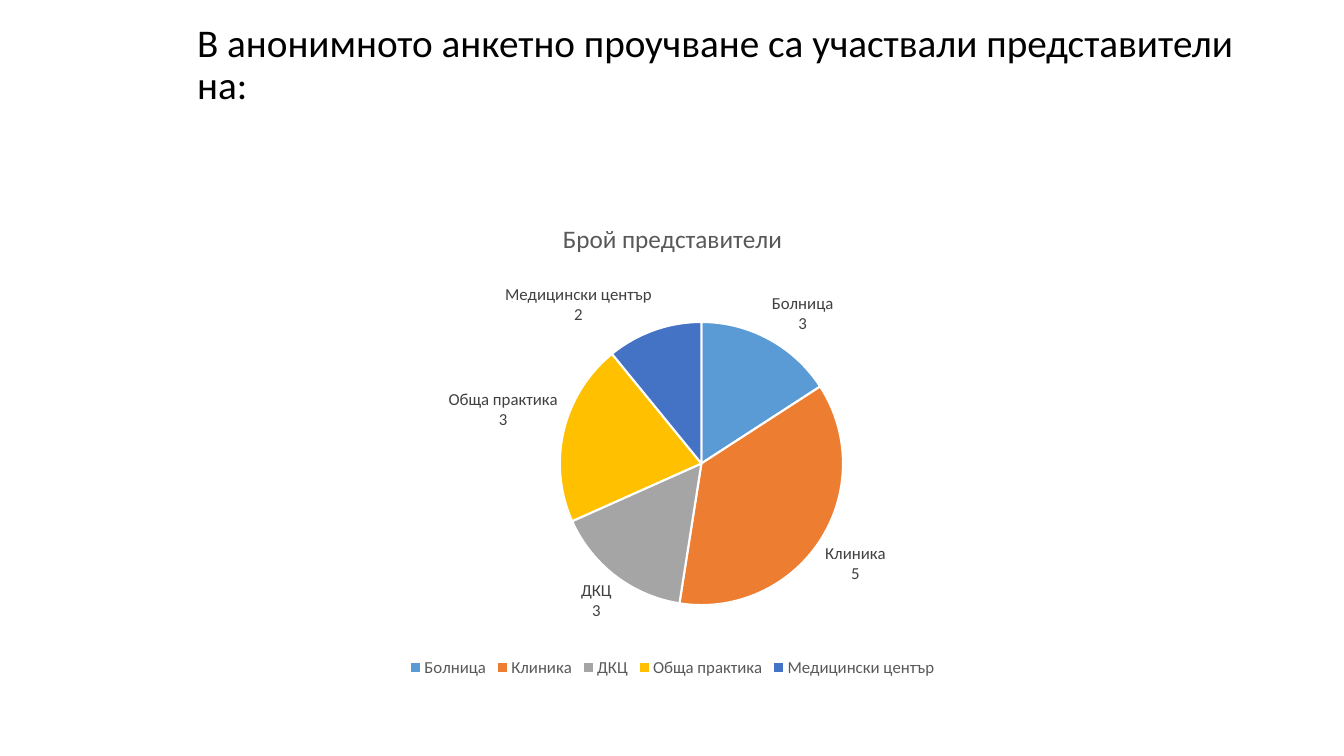
from dataclasses import dataclass

from lxml.etree import SubElement
from pptx import Presentation
from pptx.chart.data import CategoryChartData
from pptx.dml.color import RGBColor
from pptx.enum.chart import XL_CHART_TYPE, XL_LABEL_POSITION, XL_LEGEND_POSITION
from pptx.enum.text import MSO_ANCHOR, MSO_AUTO_SIZE, PP_ALIGN
from pptx.oxml.ns import qn
from pptx.util import Emu, Pt


@dataclass(frozen=True)
class Theme:
    """Font, type sizes and colours of the slide."""
    font: str = "Calibri"
    title_size: int = 28
    chart_title_size: int = 18
    label_size: int = 12
    text: str = "000000"
    muted: str = "595959"
    label: str = "404040"
    white: str = "FFFFFF"
    slices: tuple = ("5B9BD5", "ED7D31", "A5A5A5", "FFC000", "4472C4")


THEME = Theme()
EMU_PER_PX = 914400 / 100.8
GROUPS = [
    ("Болница", 16, 3),
    ("Клиника", 37, 5),
    ("ДКЦ", 16, 3),
    ("Обща практика", 21, 3),
    ("Медицински център", 11, 2),
]


def px(n):
    """Turn pixels into EMU."""
    return Emu(round(n * EMU_PER_PX))


def style_font(font, size, color):
    """Set typeface, size and colour of a font."""
    font.name = THEME.font
    font.size = Pt(size)
    font.bold = False
    font.color.rgb = RGBColor.from_string(color)


def style_text(tf, size, color):
    """Style every run of a text frame."""
    for p in tf.paragraphs:
        for r in p.runs:
            style_font(r.font, size, color)


def add_title(s, text, left, top, width, height):
    """Place and format the title placeholder."""
    sp = s.shapes.title
    sp.left, sp.top, sp.width, sp.height = map(px, (left, top, width, height))
    tf = sp.text_frame
    tf.text = text
    tf.word_wrap = True
    tf.auto_size = MSO_AUTO_SIZE.NONE
    tf.vertical_anchor = MSO_ANCHOR.MIDDLE
    p = tf.paragraphs[0]
    p.alignment = PP_ALIGN.LEFT
    p.line_spacing = 0.9
    style_text(tf, THEME.title_size, THEME.text)


def place_plot(chart, **fractions):
    """Fix the inner plot area as fractions of the chart."""
    plot_area = chart._chartSpace.chart.plotArea
    for old in plot_area.findall(qn("c:layout")):
        plot_area.remove(old)
    layout = SubElement(plot_area, qn("c:layout"))
    plot_area.insert(0, layout)
    manual = SubElement(layout, qn("c:manualLayout"))
    settings = {"layoutTarget": "inner", "xMode": "edge", "yMode": "edge", **fractions}
    for name, value in settings.items():
        SubElement(manual, qn(f"c:{name}")).set("val", str(value))


def style_slice(point, color, text):
    """Colour one slice and write its label."""
    point.format.fill.solid()
    point.format.fill.fore_color.rgb = RGBColor.from_string(color)
    point.format.line.color.rgb = RGBColor.from_string(THEME.white)
    point.format.line.width = Pt(1.5)
    tf = point.data_label.text_frame
    tf.text = text
    style_text(tf, THEME.label_size, THEME.label)
    point.data_label.position = XL_LABEL_POSITION.OUTSIDE_END


def add_pie(s, title, groups, left, top, width, height):
    """Add the pie chart with title, labels and legend."""
    data = CategoryChartData()
    data.categories = [name for name, _, _ in groups]
    data.add_series("Series 1", [share for _, share, _ in groups])
    box = map(px, (left, top, width, height))
    chart = s.shapes.add_chart(XL_CHART_TYPE.PIE, *box, data).chart
    style_font(chart.font, THEME.label_size, THEME.label)
    chart.has_title = True
    chart.chart_title.include_in_layout = False
    tf = chart.chart_title.text_frame
    tf.text = title
    style_text(tf, THEME.chart_title_size, THEME.muted)
    chart.has_legend = True
    chart.legend.position = XL_LEGEND_POSITION.BOTTOM
    chart.legend.include_in_layout = False
    style_font(chart.legend.font, THEME.label_size, THEME.muted)
    plot = chart.plots[0]
    plot.vary_by_categories = True
    for i, (name, _, count) in enumerate(groups):
        style_slice(plot.series[0].points[i], THEME.slices[i], f"{name}\n{count}")
    place_plot(chart, x=0.4, y=0.25, w=0.25, h=0.59)


def main():
    """Build the slide and save it."""
    prs = Presentation()
    prs.slide_width, prs.slide_height = px(1344), px(756)
    s = prs.slides.add_slide(prs.slide_layouts[5])
    add_title(s, "В анонимното анкетно проучване са участвали представители на:",
              187, 21, 1064, 89)
    add_pie(s, "Брой представители", GROUPS, 93, 202, 1159, 480)
    prs.save("out.pptx")


if __name__ == "__main__":
    main()
